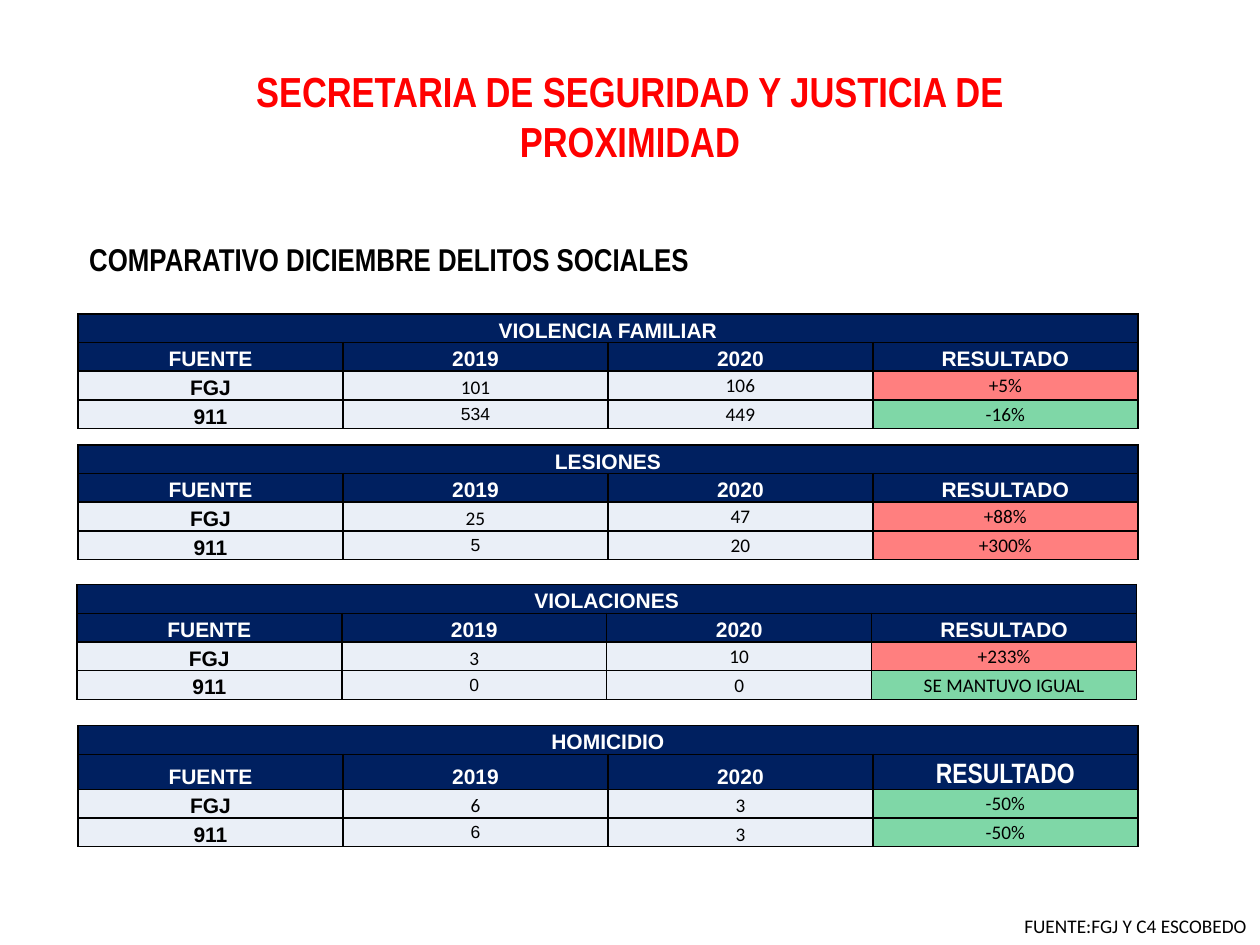
"""Build the slide comparing December social crimes in 2019 and 2020."""
from dataclasses import dataclass

from lxml import etree
from pptx import Presentation
from pptx.dml.color import RGBColor
from pptx.enum.text import MSO_ANCHOR, MSO_AUTO_SIZE, PP_ALIGN
from pptx.oxml.ns import qn
from pptx.slide import Slide
from pptx.util import Pt

LEFT = PP_ALIGN.LEFT
CENTER = PP_ALIGN.CENTER
BOTTOM = MSO_ANCHOR.BOTTOM
MIDDLE = MSO_ANCHOR.MIDDLE
FIT_SHAPE = MSO_AUTO_SIZE.SHAPE_TO_FIT_TEXT

RED, GREEN = "FF0000", "00B050"
BLACK, WHITE = "000000", "FFFFFF"
NAVY, PALE = "002060", "EAEFF7"

LABEL = ("Arial", 12, True)
VALUE = ("Calibri", 11, False)
SMALL_VALUE = ("Arial", 10, False)
NARROW_HEADING = ("Arial Narrow", 16, True)

HEADINGS = ("FUENTE", "2019", "2020", "RESULTADO")
COLUMN_WIDTH = 151.4
ROW_HEIGHT = 16.4
TALL_ROW_HEIGHT = 20


def color(value):
    """Turn a hex string into a colour."""
    return RGBColor.from_string(value)


@dataclass
class SlideBuilder:
    """Hold the style and the current slide."""

    slide: Slide
    border_color: str = BLACK
    border_width: float = 1
    cell_inset: float = 0.7

    def run(self, paragraph, text, font, font_color):
        """Add one styled run to a paragraph."""
        run = paragraph.add_run()
        run.text = text
        run.font.name, size, run.font.bold = font
        run.font.size = Pt(size)
        run.font.color.rgb = color(font_color)

    def text(self, box, text, font, font_color, alignment=LEFT, wrap=True):
        """Add a text box that grows with its text."""
        shape = self.slide.shapes.add_textbox(*map(Pt, box))
        frame = shape.text_frame
        frame.word_wrap = wrap
        frame.auto_size = FIT_SHAPE
        paragraph = frame.paragraphs[0]
        paragraph.alignment = alignment
        self.run(paragraph, text, font, font_color)

    def cell_style(self, cell, fill, alpha=None):
        """Give a cell its insets, borders and fill."""
        cell.margin_left = cell.margin_right = cell.margin_top = Pt(self.cell_inset)
        cell.margin_bottom = 0
        properties = cell._tc.get_or_add_tcPr()
        for side in ("a:lnL", "a:lnR", "a:lnT", "a:lnB"):
            line = etree.SubElement(properties, qn(side), w=str(Pt(self.border_width)))
            line_fill = etree.SubElement(line, qn("a:solidFill"))
            etree.SubElement(line_fill, qn("a:srgbClr"), val=self.border_color)
        cell.fill.solid()
        cell.fill.fore_color.rgb = color(fill)
        if alpha:
            fill_color = properties.find(f"{qn('a:solidFill')}/{qn('a:srgbClr')}")
            etree.SubElement(fill_color, qn("a:alpha"), val=str(alpha * 1000))

    def cell_text(self, cell, text, font, font_color, anchor=BOTTOM):
        """Write centred text in a cell."""
        cell.vertical_anchor = anchor
        paragraph = cell.text_frame.paragraphs[0]
        paragraph.alignment = CENTER
        self.run(paragraph, text, font, font_color)

    def crime_table(self, left, top, title, records, last_heading=LABEL,
                    last_year_anchors=(MIDDLE, MIDDLE)):
        """Add the table of one crime, with a row for each source."""
        heading_height = ROW_HEIGHT if last_heading == LABEL else TALL_ROW_HEIGHT
        heights = (ROW_HEIGHT, heading_height, ROW_HEIGHT, ROW_HEIGHT)
        box = (left, top, COLUMN_WIDTH * len(HEADINGS), sum(heights))
        table = self.slide.shapes.add_table(
            len(heights), len(HEADINGS), *map(Pt, box)).table
        table.first_row = table.horz_banding = False
        for column in table.columns:
            column.width = Pt(COLUMN_WIDTH)
        for row, height in zip(table.rows, heights):
            row.height = Pt(height)

        for column in range(len(HEADINGS)):
            self.cell_style(table.cell(0, column), NAVY)
        table.cell(0, 0).merge(table.cell(0, len(HEADINGS) - 1))
        self.cell_text(table.cell(0, 0), title, LABEL, WHITE)

        heading_fonts = (LABEL, LABEL, LABEL, last_heading)
        for column, (heading, font) in enumerate(zip(HEADINGS, heading_fonts)):
            cell = table.cell(1, column)
            self.cell_style(cell, NAVY)
            self.cell_text(cell, heading, font, WHITE)

        first_year_styles = ((VALUE, BOTTOM), (SMALL_VALUE, MIDDLE))
        for index, (*texts, result_fill) in enumerate(records):
            styles = ((LABEL, BOTTOM), first_year_styles[index],
                      (VALUE, last_year_anchors[index]), (VALUE, MIDDLE))
            fills = ((PALE,), (PALE,), (PALE,), (result_fill, 50))
            for column, (text, style, fill) in enumerate(zip(texts, styles, fills)):
                font, anchor = style
                cell = table.cell(index + 2, column)
                self.cell_style(cell, *fill)
                self.cell_text(cell, text, font, BLACK, anchor)


def main():
    """Build and save the presentation."""
    presentation = Presentation()
    presentation.slide_width, presentation.slide_height = Pt(720), Pt(540)
    builder = SlideBuilder(presentation.slides.add_slide(presentation.slide_layouts[6]))

    builder.text((136.8, 33.8, 446.4, 65.5),
                 "SECRETARIA DE SEGURIDAD Y JUSTICIA DE PROXIMIDAD",
                 ("Arial Narrow", 24, True), RED, CENTER)
    builder.text((578.2, 519.1, 142.6, 20.9), "FUENTE:FGJ Y C4 ESCOBEDO",
                 VALUE, BLACK, wrap=False)
    builder.text((43.9, 133.9, 531.4, 28.8), "COMPARATIVO DICIEMBRE DELITOS SOCIALES",
                 ("Arial Narrow", 18, True), BLACK)

    builder.crime_table(44.6, 179.3, "VIOLENCIA FAMILIAR", (
        ("FGJ", "101", "106", "+5%", RED),
        ("911", "534", "449", "-16%", GREEN)))
    builder.crime_table(44.6, 254.2, "LESIONES", (
        ("FGJ", "25", "47", "+88%", RED),
        ("911", "5", "20", "+300%", RED)))
    builder.crime_table(43.9, 334.1, "VIOLACIONES", (
        ("FGJ", "3", "10", "+233%", RED),
        ("911", "0", "0", "SE MANTUVO IGUAL", GREEN)))
    builder.crime_table(44.6, 414.7, "HOMICIDIO", (
        ("FGJ", "6", "3", "-50%", GREEN),
        ("911", "6", "3", "-50%", GREEN)),
        last_heading=NARROW_HEADING, last_year_anchors=(BOTTOM, BOTTOM))

    presentation.save("out.pptx")


if __name__ == "__main__":
    main()
